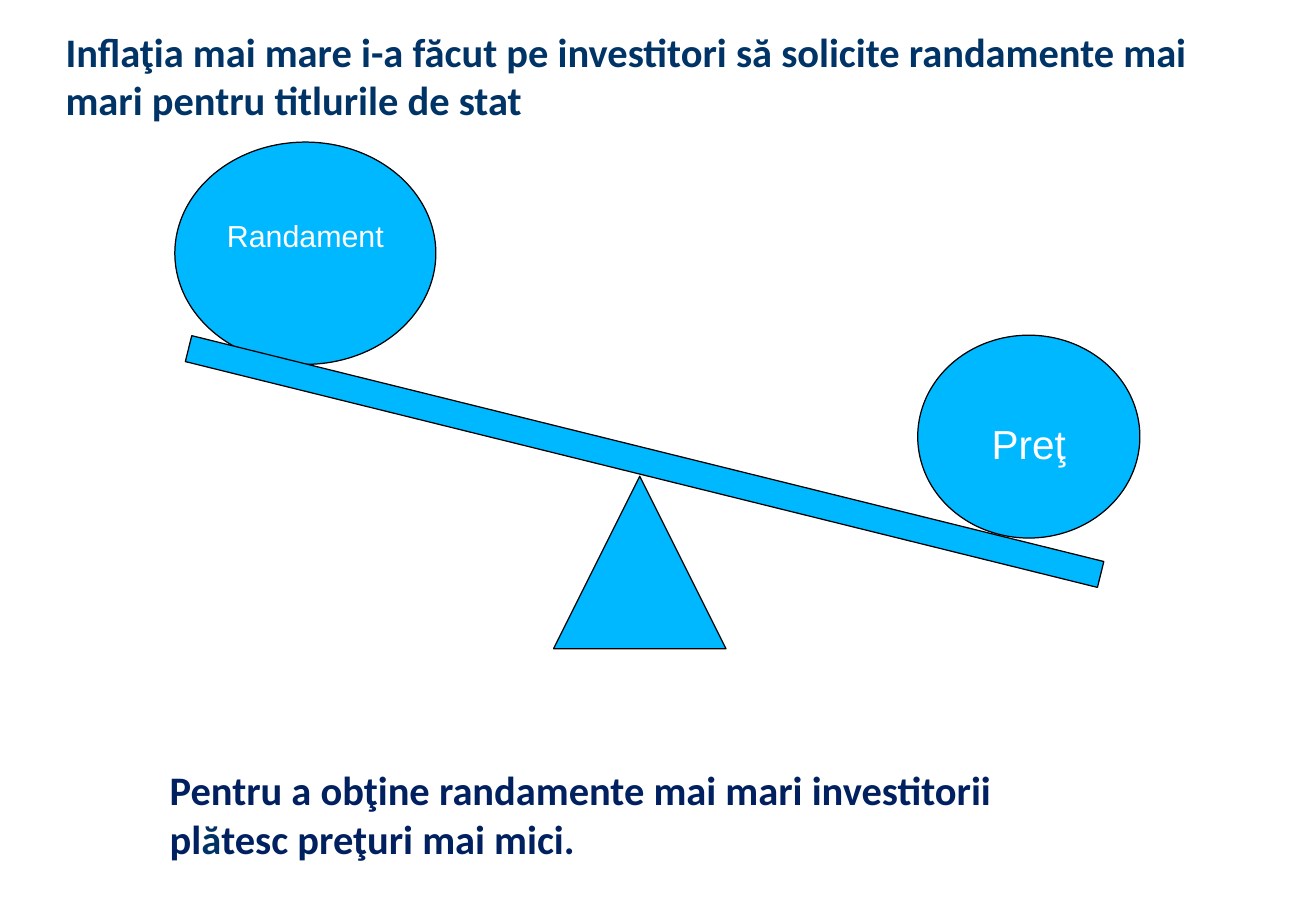
from pptx import Presentation
from pptx.dml.color import RGBColor
from pptx.enum.shapes import MSO_SHAPE as Shape
from pptx.enum.text import MSO_ANCHOR as Anchor, MSO_AUTO_SIZE as AutoSize, PP_ALIGN as Align
from pptx.util import Emu, Pt

EMU_PER_PX = 9144
NAVY, DARK_BLUE, SKY, BLACK, WHITE = "003366", "002060", "00B8FF", "000000", "FFFFFF"


def px(value):
    return Emu(value * EMU_PER_PX)


def color(hex_string):
    return RGBColor.from_string(hex_string)


class SeesawSlide:
    """Draws the elements of the slide in one shared style."""

    def __init__(self, presentation):
        self.slide = presentation.slides.add_slide(presentation.slide_layouts[5])
        self.seesaw = None

    def style(self, run, size, font, hex_string, bold=False):
        run.font.size = Pt(size)
        run.font.name = font
        run.font.bold = bold
        run.font.color.rgb = color(hex_string)

    def title(self, box, text):
        shape = self.slide.shapes.title
        shape.left, shape.top, shape.width, shape.height = map(px, box)
        frame = shape.text_frame
        frame.text = text
        frame.word_wrap = True
        frame.auto_size = AutoSize.NONE
        frame.vertical_anchor = Anchor.MIDDLE
        paragraph = frame.paragraphs[0]
        paragraph.alignment = Align.LEFT
        self.style(paragraph.runs[0], 24, "Calibri", NAVY, True)

    def solid(self, kind, box, rotation=0):
        if self.seesaw is None:
            self.seesaw = self.slide.shapes.add_group_shape()
        shape = self.seesaw.shapes.add_shape(kind, *map(px, box))
        shape.rotation = rotation
        shape.shadow.inherit = False
        shape.fill.solid()
        shape.fill.fore_color.rgb = color(SKY)
        shape.line.color.rgb = color(BLACK)
        shape.line.width = Pt(0.75)
        return shape

    def ball(self, box, text, size):
        frame = self.solid(Shape.FLOWCHART_CONNECTOR, box).text_frame
        frame.text = text
        frame.vertical_anchor = Anchor.TOP
        paragraph = frame.paragraphs[0]
        paragraph.alignment = Align.CENTER
        paragraph.line_spacing = 2.0
        self.style(paragraph.runs[0], size, "Arial", WHITE)

    def conclusion(self, box, pieces):
        frame = self.slide.shapes.add_textbox(*map(px, box)).text_frame
        frame.word_wrap = True
        frame.auto_size = AutoSize.SHAPE_TO_FIT_TEXT
        for text, hex_string in pieces:
            run = frame.paragraphs[0].add_run()
            run.text = text
            self.style(run, 24, "Calibri", hex_string, True)


def main():
    presentation = Presentation()
    presentation.slide_width, presentation.slide_height = px(1084), px(750)
    slide = SeesawSlide(presentation)
    slide.title((44, 8, 996, 108),
                "Inflaţia mai mare i-a făcut pe investitori să solicite "
                "randamente mai mari pentru titlurile de stat")
    slide.ball((144, 117, 215, 183), "Randament", 18)
    slide.ball((756, 276, 183, 167), "Preţ", 24)
    slide.solid(Shape.RECTANGLE, (144, 369, 774, 22), 13.9)
    slide.solid(Shape.ISOSCELES_TRIANGLE, (456, 392, 142, 142))
    slide.conclusion((130, 625, 707, 91), [
        ("Pentru a obţine randamente mai mari investitorii pl", DARK_BLUE),
        ("ă", NAVY),
        ("tesc preţuri mai mici.", DARK_BLUE),
    ])
    presentation.save("out.pptx")


if __name__ == "__main__":
    main()
